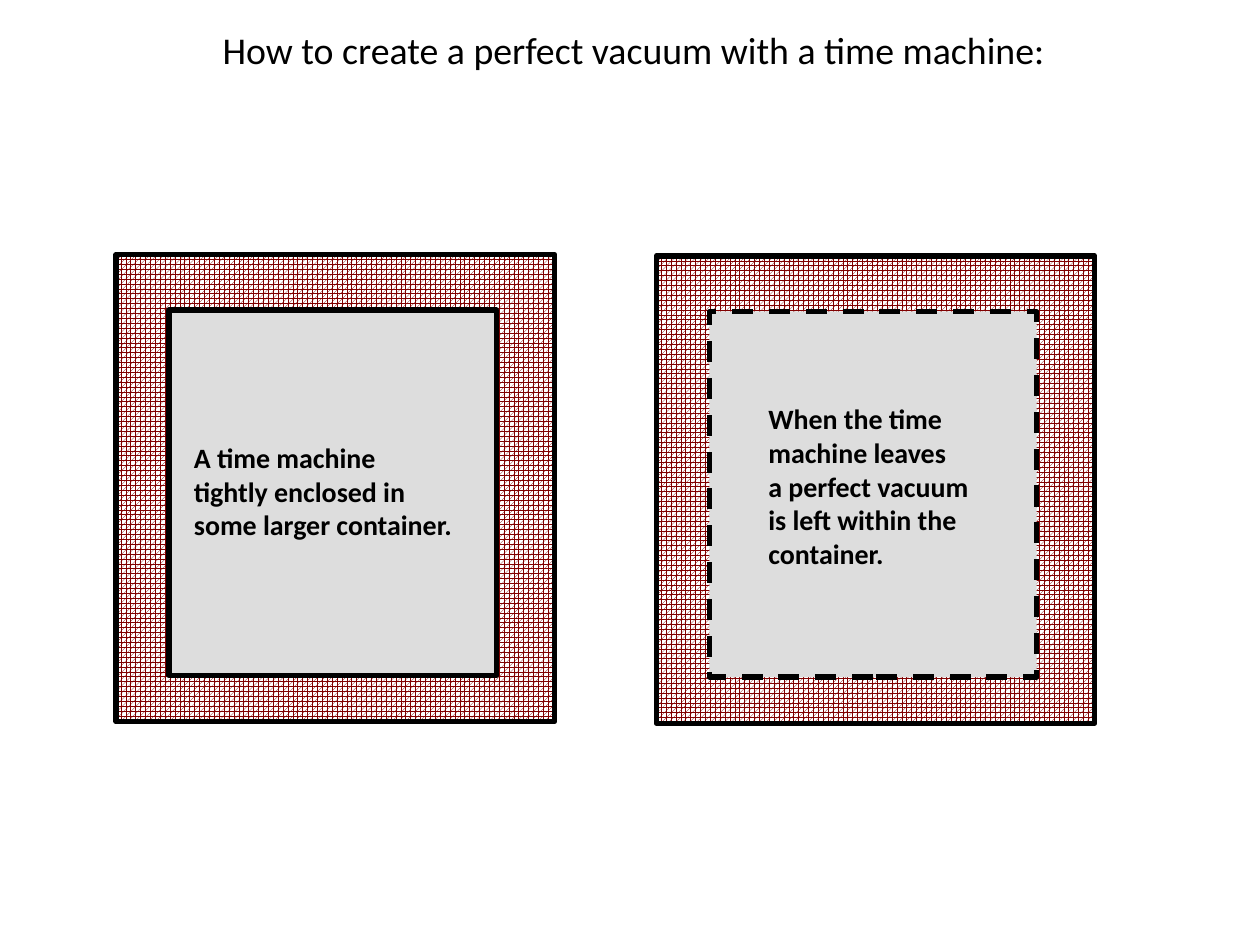
from dataclasses import dataclass

from pptx import Presentation
from pptx.dml.color import RGBColor
from pptx.enum.dml import MSO_LINE, MSO_PATTERN
from pptx.enum.shapes import MSO_SHAPE
from pptx.enum.text import MSO_ANCHOR, MSO_AUTO_SIZE, PP_ALIGN
from pptx.util import Cm, Pt


@dataclass(frozen=True)
class Theme:
    """Colours, font and sizes of the slide."""

    ink: RGBColor = RGBColor(0x00, 0x00, 0x00)
    paper: RGBColor = RGBColor(0xFF, 0xFF, 0xFF)
    wall: RGBColor = RGBColor(0x80, 0x00, 0x00)
    interior: RGBColor = RGBColor(0xDD, 0xDD, 0xDD)
    font: str = "Calibri"
    title_size: float = 21.6
    label_size: float = 16
    outline: float = 3


class SlideBuilder:
    """Draws styled elements on the current slide."""

    def __init__(self, page, theme):
        self.page = page
        self.theme = theme

    def style(self, paragraph, size, bold):
        """Set the font of a paragraph."""
        font = paragraph.font
        font.name = self.theme.font
        font.size = Pt(size)
        font.bold = bold
        font.color.rgb = self.theme.ink

    def title(self, text, left, top, width, height):
        """Place and fill the title placeholder."""
        box = self.page.shapes.title
        box.left, box.top, box.width, box.height = Cm(left), Cm(top), Cm(width), Cm(height)
        frame = box.text_frame
        frame.text = text
        frame.auto_size = MSO_AUTO_SIZE.NONE
        frame.vertical_anchor = MSO_ANCHOR.MIDDLE
        paragraph = frame.paragraphs[0]
        paragraph.alignment = PP_ALIGN.CENTER
        self.style(paragraph, self.theme.title_size, False)

    def rectangle(self, shapes, left, top, width, height):
        """Add an outlined rectangle without a shadow."""
        box = shapes.add_shape(MSO_SHAPE.RECTANGLE, Cm(left), Cm(top), Cm(width), Cm(height))
        box.shadow.inherit = False
        box.line.color.rgb = self.theme.ink
        box.line.width = Pt(self.theme.outline)
        return box

    def container(self, shapes, left, top, dashed=False):
        """Add a patterned container around a plain interior."""
        wall = self.rectangle(shapes, left, top, 8.84, 9.42)
        wall.fill.patterned()
        wall.fill.pattern = MSO_PATTERN.SPHERE
        wall.fill.fore_color.rgb = self.theme.wall
        wall.fill.back_color.rgb = self.theme.paper
        interior = self.rectangle(shapes, left + 1.07, top + 1.12, 6.6, 7.37)
        interior.fill.solid()
        interior.fill.fore_color.rgb = self.theme.interior
        if dashed:
            interior.line.dash_style = MSO_LINE.DASH

    def label(self, lines, left, top, width, height):
        """Add a bold label with one paragraph per line."""
        box = self.page.shapes.add_textbox(Cm(left), Cm(top), Cm(width), Cm(height))
        frame = box.text_frame
        frame.word_wrap = False
        frame.auto_size = MSO_AUTO_SIZE.SHAPE_TO_FIT_TEXT
        frame.text = "\n".join(lines)
        for paragraph in frame.paragraphs:
            self.style(paragraph, self.theme.label_size, True)


def main():
    """Build and save the deck."""
    deck = Presentation()
    deck.slide_width, deck.slide_height = Cm(25.4), Cm(19.05)
    page = deck.slides.add_slide(deck.slide_layouts[5])
    builder = SlideBuilder(page, Theme())
    builder.title("How to create a perfect vacuum with a time machine:", 1.98, 0.46, 21.59, 1.09)
    builder.container(page.shapes.add_group_shape().shapes, 2.34, 5.13)
    builder.container(page.shapes, 13.23, 5.16, dashed=True)
    builder.label(
        ["A time machine", "tightly enclosed in", "some larger container."],
        3.66, 8.76, 5.94, 2.29,
    )
    builder.label(
        ["When the time", "machine leaves", "a perfect vacuum", "is left within the", "container."],
        15.24, 7.98, 4.7, 3.66,
    )
    deck.save("out.pptx")


if __name__ == "__main__":
    main()
